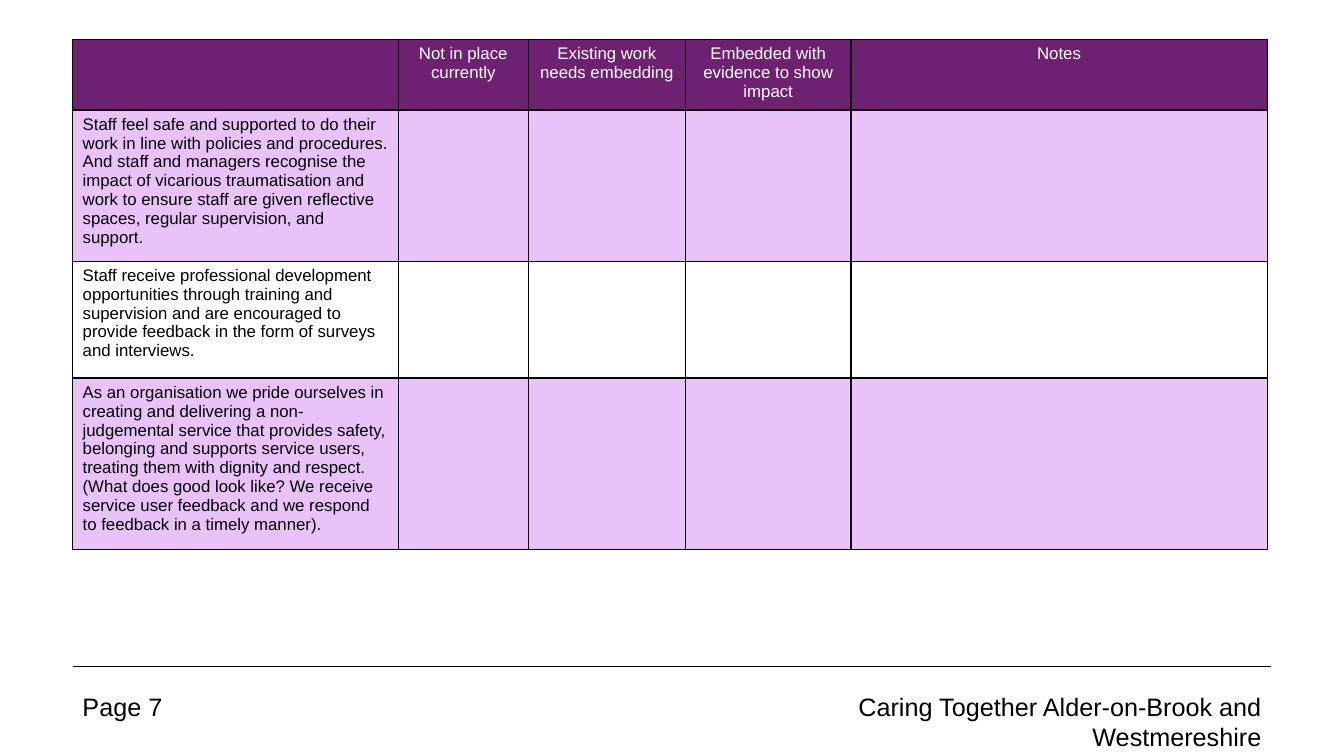
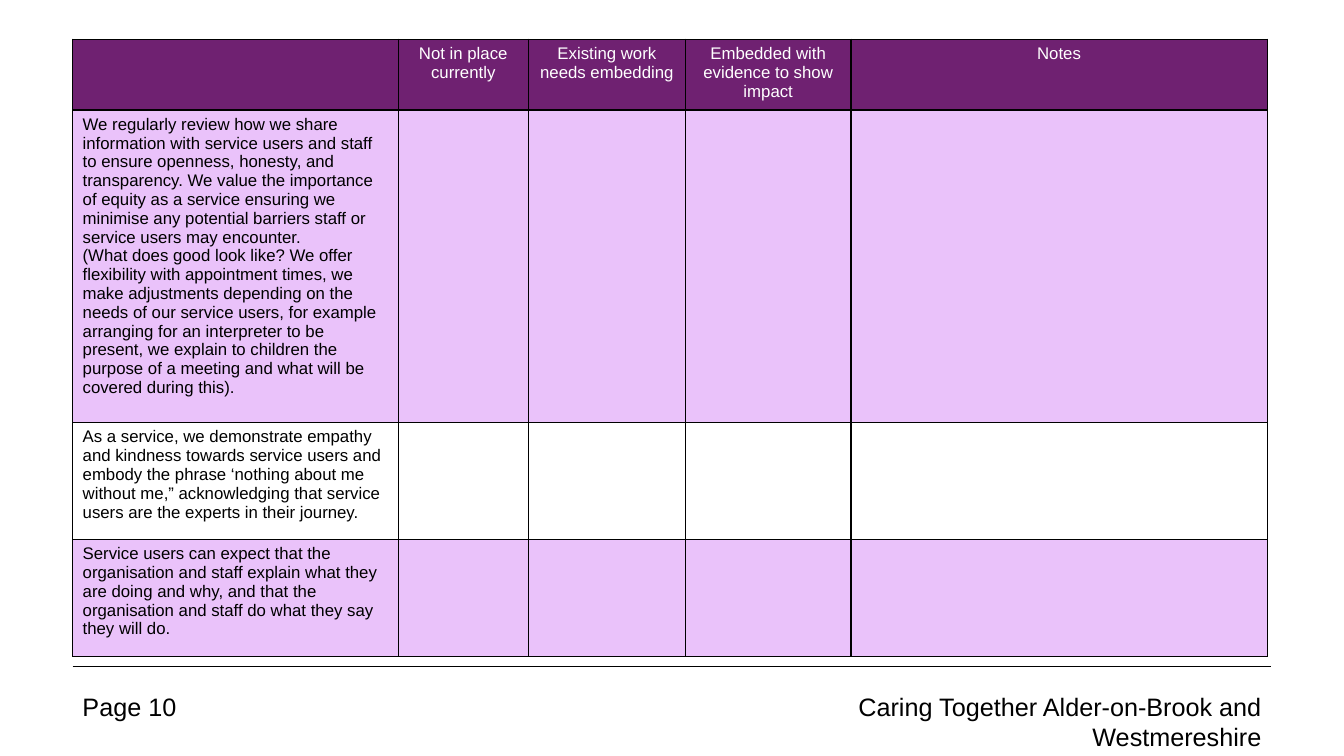
import pptx
import pptx.dml.color
import pptx.enum.shapes
import pptx.enum.text
import pptx.oxml
import pptx.oxml.ns
import pptx.util
from lxml import etree

COLORS = {
    "ink": "000000",
    "paper": "FFFFFF",
    "header": "6F2171",
    "band": "EAC2FA",
}
FONT = "Arial"
ALIGN = pptx.enum.text.PP_ALIGN

# Page grid, in inches
SLIDE_WIDTH, SLIDE_HEIGHT = 13.33, 7.5
LEFT, RIGHT, TOP = 0.72, 12.61, 0.39
RULE_Y = 6.61
FOOTER_Y, FOOTER_HEIGHT = 6.81, 0.4
PAGE_WIDTH, PROGRAMME_WIDTH = 1.2, 5.86
COLUMNS = [3.23, 1.29, 1.56, 1.64, 4.13]
HEADER_HEIGHT = 0.7

PROGRAMME = "Caring Together Alder-on-Brook and Westmereshire"
HEADINGS = [
    "",
    "Not in place currently",
    "Existing work needs embedding",
    "Embedded with evidence to show impact",
    "Notes",
]

# Each page: number and its (statement, row height) pairs
PAGES = [
    (7, [
        ("Staff feel safe and supported to do their work in line with policies "
         "and procedures. And staff and managers recognise the impact of "
         "vicarious traumatisation and work to ensure staff are given "
         "reflective spaces, regular supervision, and support.", 1.5),
        ("Staff receive professional development opportunities through "
         "training and supervision and are encouraged to provide feedback in "
         "the form of surveys and interviews.", 1.16),
        ("As an organisation we pride ourselves in creating and delivering a "
         "non-judgemental service that provides safety, belonging and supports "
         "service users, treating them with dignity and respect. (What does "
         "good look like? We receive service user feedback and we respond to "
         "feedback in a timely manner).", 1.7),
    ]),
    (10, [
        ("We regularly review how we share information with service users and "
         "staff to ensure openness, honesty, and transparency. We value the "
         "importance of equity as a service ensuring we minimise any potential "
         "barriers staff or service users may encounter.\n"
         "(What does good look like? We offer flexibility with appointment "
         "times, we make adjustments depending on the needs of our service "
         "users, for example arranging for an interpreter to be present, we "
         "explain to children the purpose of a meeting and what will be "
         "covered during this).", 3.1),
        ("As a service, we demonstrate empathy and kindness towards service "
         "users and embody the phrase ‘nothing about me without me,” "
         "acknowledging that service users are the experts in their journey.",
         1.16),
        ("Service users can expect that the organisation and staff explain "
         "what they are doing and why, and that the organisation and staff do "
         "what they say they will do.", 1.16),
    ]),
]


def rgb(name):
    return pptx.dml.color.RGBColor.from_string(COLORS[name])


def write(frame, text, size=12, color="ink", align=ALIGN.LEFT):
    """Fill a text frame, one paragraph for each line of text."""
    frame.text = text
    frame.word_wrap = True
    for paragraph in frame.paragraphs:
        paragraph.alignment = align
        for part in (paragraph, *paragraph.runs):
            font = part.font
            font.name, font.size, font.bold = FONT, pptx.util.Pt(size), False
            font.color.rgb = rgb(color)


def add_borders(cell, width=1):
    """Draw the four cell edges; they come before the fill in the cell XML."""
    properties = cell._tc.get_or_add_tcPr()
    for position, edge in enumerate(("lnL", "lnR", "lnT", "lnB")):
        line = pptx.oxml.parse_xml(
            f'<a:{edge} {pptx.oxml.ns.nsdecls("a")} w="{pptx.util.Pt(width)}">'
            f'<a:solidFill><a:srgbClr val="{COLORS["ink"]}"/></a:solidFill>'
            f'</a:{edge}>')
        properties.insert(position, line)


def add_checklist(slide, statements):
    heights = [HEADER_HEIGHT] + [height for _, height in statements]
    frame = slide.shapes.add_table(
        len(heights), len(COLUMNS),
        pptx.util.Inches(LEFT), pptx.util.Inches(TOP),
        pptx.util.Inches(sum(COLUMNS)), pptx.util.Inches(sum(heights)))
    checklist = frame.table
    checklist.first_row = checklist.horz_banding = False
    for column, width in zip(checklist.columns, COLUMNS):
        column.width = pptx.util.Inches(width)
    for row, height in zip(checklist.rows, heights):
        row.height = pptx.util.Inches(height)

    # Header row, then bands that alternate with plain rows
    blanks = [""] * (len(COLUMNS) - 1)
    contents = [HEADINGS] + [[text] + blanks for text, _ in statements]
    for r, texts in enumerate(contents):
        fill = "header" if r == 0 else "band" if r % 2 else "paper"
        style = {"color": "paper", "align": ALIGN.CENTER} if r == 0 else {}
        for c, text in enumerate(texts):
            cell = checklist.cell(r, c)
            cell.fill.solid()
            cell.fill.fore_color.rgb = rgb(fill)
            add_borders(cell)
            write(cell.text_frame, text, **style)


def add_footer_text(slide, text, left, width, align=ALIGN.LEFT):
    box = slide.shapes.add_textbox(
        pptx.util.Inches(left), pptx.util.Inches(FOOTER_Y),
        pptx.util.Inches(width), pptx.util.Inches(FOOTER_HEIGHT))
    write(box.text_frame, text, size=18, align=align)


def add_footer(slide, number):
    # Rule above the footer
    rule = slide.shapes.add_connector(
        pptx.enum.shapes.MSO_CONNECTOR.STRAIGHT,
        pptx.util.Inches(LEFT), pptx.util.Inches(RULE_Y),
        pptx.util.Inches(RIGHT), pptx.util.Inches(RULE_Y))
    rule.line.color.rgb = rgb("ink")
    rule.line.width = pptx.util.Pt(0.5)
    etree.SubElement(rule._element.spPr, pptx.oxml.ns.qn("a:effectLst"))

    # Page number and programme name
    add_footer_text(slide, f"Page {number}", LEFT, PAGE_WIDTH)
    add_footer_text(slide, PROGRAMME, RIGHT - PROGRAMME_WIDTH, PROGRAMME_WIDTH,
                    align=ALIGN.RIGHT)


def main():
    deck = pptx.Presentation()
    deck.slide_width = pptx.util.Inches(SLIDE_WIDTH)
    deck.slide_height = pptx.util.Inches(SLIDE_HEIGHT)
    for number, statements in PAGES:
        slide = deck.slides.add_slide(deck.slide_layouts[6])
        add_footer(slide, number)
        add_checklist(slide, statements)
    deck.save("out.pptx")


if __name__ == "__main__":
    main()
